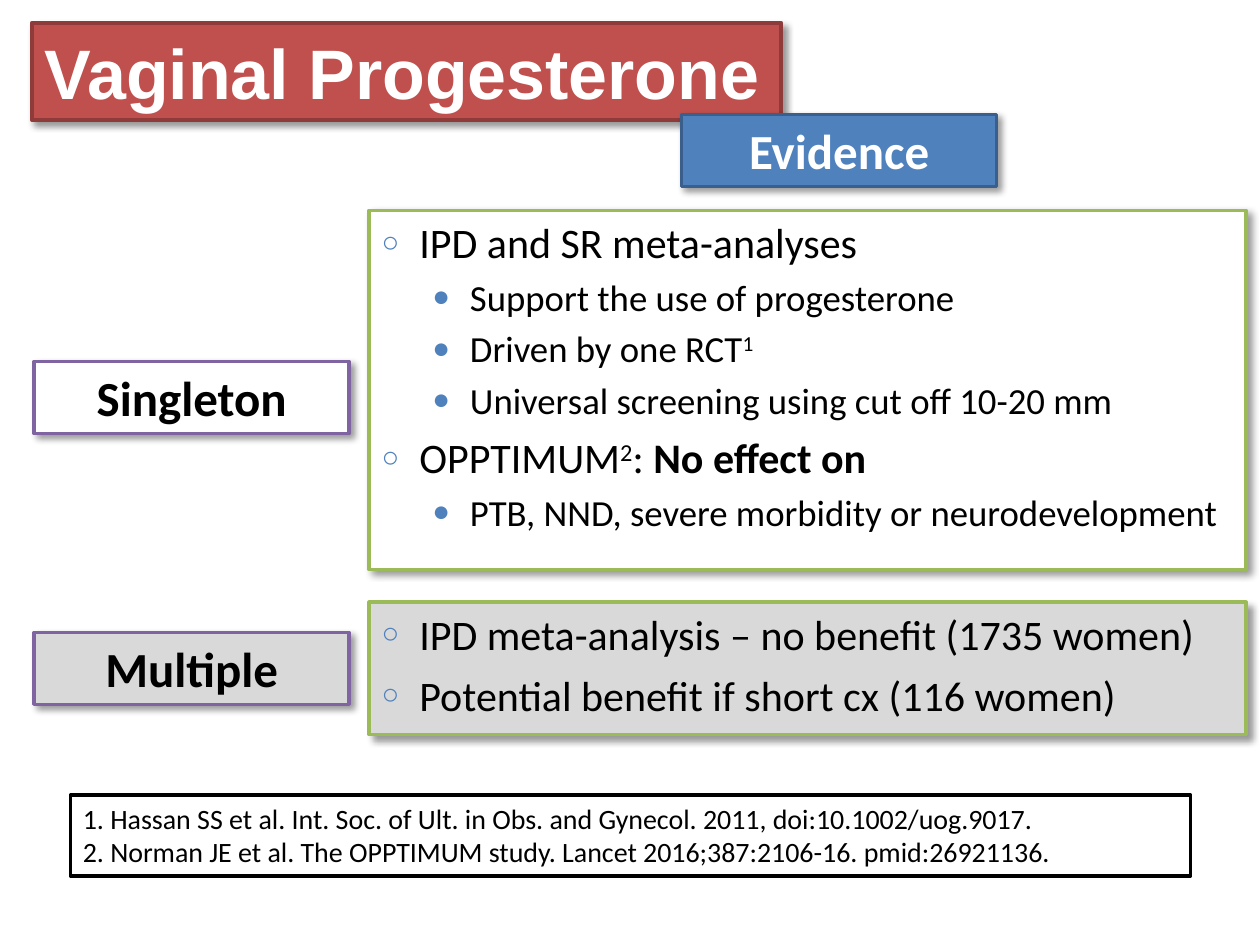
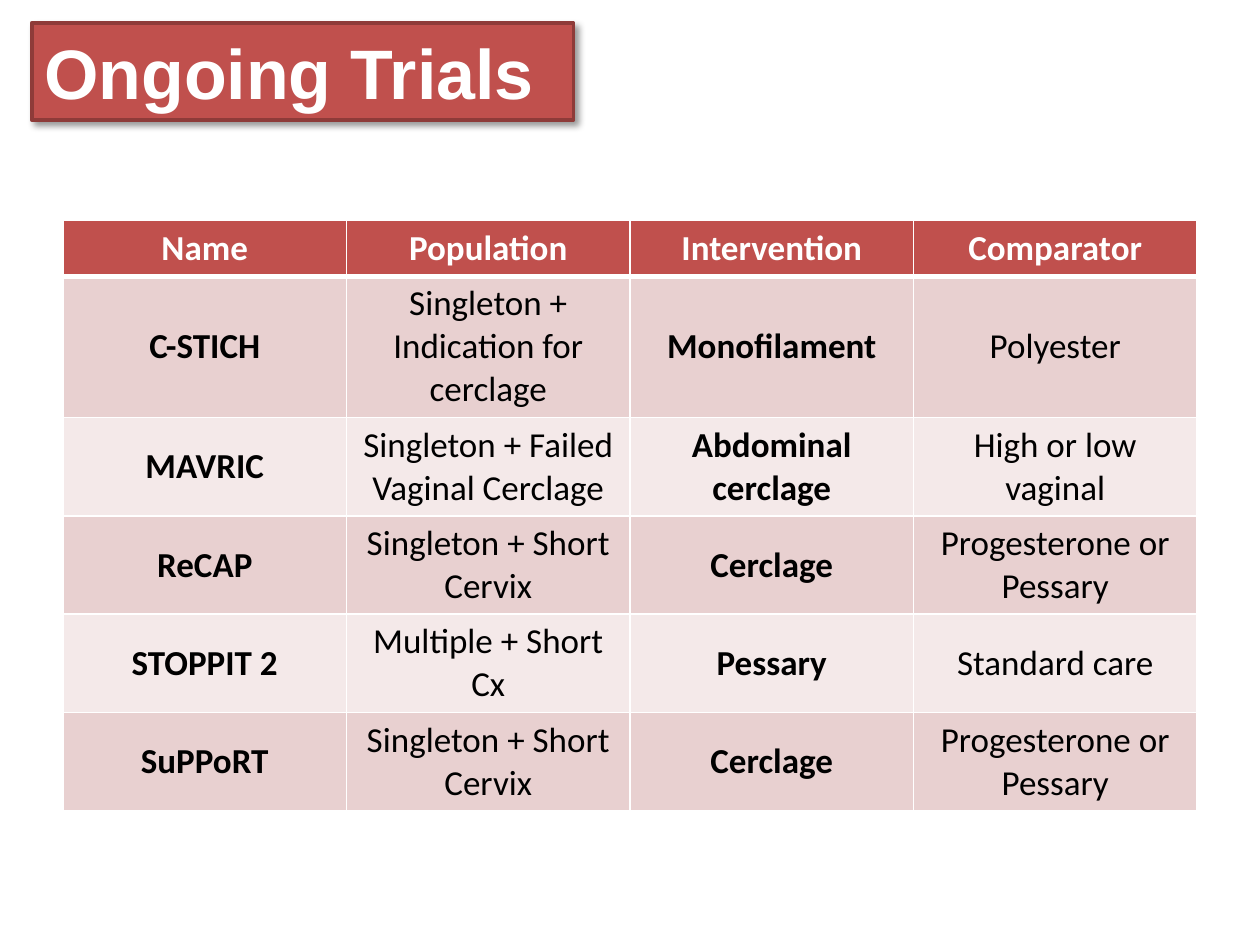
from lxml.etree import SubElement
from pptx import Presentation
from pptx.dml.color import RGBColor
from pptx.enum.shapes import MSO_SHAPE
from pptx.enum.text import MSO_ANCHOR, MSO_AUTO_SIZE, PP_ALIGN
from pptx.oxml.ns import qn
from pptx.util import Cm, Pt

COLOURS = {
    "white": "FFFFFF", "black": "000000", "grey": "D9D9D9",
    "red": "C0504D", "dark_red": "8E3B39", "blue": "4F81BD",
    "dark_blue": "3A5F8C", "green": "9BBB59", "purple": "8064A2",
    "dark_row": "E8D0D0", "light_row": "F4E9E9",
}
BULLETS = [
    {"sign": "○", "percent": 70, "margin": 0.76, "size": 24, "before": 6},
    {"sign": "●", "percent": 80, "margin": 1.78, "size": 21, "before": 4.2},
]
HANGING = 0.76
LABEL_SIZE = (6.35, 1.45)
BODY_LEFT, BODY_WIDTH = 7.44, 17.68

SINGLETON_POINTS = [
    (0, ["IPD and SR meta-analyses"]),
    (1, ["Support the use of progesterone"]),
    (1, ["Driven by one RCT", ("1", {"raised": True})]),
    (1, ["Universal screening using cut off 10-20 mm"]),
    (0, ["OPPTIMUM", ("2", {"raised": True}), ": ", ("No effect on", {"bold": True})]),
    (1, ["PTB, NND, severe morbidity or neurodevelopment"]),
]
MULTIPLE_POINTS = [
    (0, ["IPD meta-analysis – no benefit (1735 women)"]),
    (0, ["Potential benefit if short cx (116 women)"]),
]
REFERENCES = [
    "1. Hassan SS et al. Int. Soc. of Ult. in Obs. and Gynecol. 2011, doi:10.1002/uog.9017.",
    "2. Norman JE et al. The OPPTIMUM study. Lancet 2016;387:2106-16. pmid:26921136.",
]
TRIALS = [
    ["Name", "Population", "Intervention", "Comparator"],
    ["C-STICH", "Singleton + Indication for cerclage", "Monofilament", "Polyester"],
    ["MAVRIC", "Singleton + Failed Vaginal Cerclage", "Abdominal cerclage", "High or low vaginal"],
    ["ReCAP", "Singleton + Short Cervix", "Cerclage", "Progesterone or Pessary"],
    ["STOPPIT 2", "Multiple + Short Cx", "Pessary", "Standard care"],
    ["SuPPoRT", "Singleton + Short Cervix", "Cerclage", "Progesterone or Pessary"],
]
ROW_HEIGHTS = [1.08, 2.8] + [1.95] * 4


def colour(name):
    return RGBColor.from_string(COLOURS[name])


def add_text(paragraph, text, size=24, font="Calibri", ink="black", bold=False,
             raised=False, align=None):
    if align is not None:
        paragraph.alignment = align
    span = paragraph.add_run()
    span.text = text
    span.font.size = Pt(size)
    span.font.name = font
    span.font.bold = bold
    span.font.color.rgb = colour(ink)
    if raised:
        span._r.get_or_add_rPr().set("baseline", "30000")


def next_paragraph(frame, index):
    return frame.add_paragraph() if index else frame.paragraphs[0]


def add_shadow(box):
    effects = SubElement(box._element.spPr, qn("a:effectLst"))
    shadow = SubElement(effects, qn("a:outerShdw"), blurRad=str(Pt(4)), dist=str(Pt(3)),
                        dir="2700000", algn="tl", rotWithShape="0")
    tint = SubElement(shadow, qn("a:srgbClr"), val=COLOURS["black"])
    SubElement(tint, qn("a:alpha"), val="40000")


def style_box(box, fill, line, shadow=True):
    box.fill.solid()
    box.fill.fore_color.rgb = colour(fill)
    box.line.color.rgb = colour(line)
    box.line.width = Pt(2)
    if shadow:
        add_shadow(box)
    frame = box.text_frame
    frame.word_wrap = True
    frame.auto_size = MSO_AUTO_SIZE.NONE
    frame.vertical_anchor = MSO_ANCHOR.TOP


def place(box, left, top, width, height):
    box.left, box.top, box.width, box.height = map(Cm, (left, top, width, height))


def set_title(page, text, width):
    title = page.shapes.title
    place(title, 0.64, 0.46, width, 1.96)
    style_box(title, "red", "dark_red")
    add_text(title.text_frame.paragraphs[0], text, size=40, font="Arial", ink="white",
             bold=True, align=PP_ALIGN.LEFT)


def add_box(page, left, top, width, height, fill, line, shadow=True):
    box = page.shapes.add_shape(MSO_SHAPE.RECTANGLE, *map(Cm, (left, top, width, height)))
    if not shadow:
        box.shadow.inherit = False
    style_box(box, fill, line, shadow)
    return box.text_frame


def add_label(page, text, left, top, fill, line, ink="black"):
    frame = add_box(page, left, top, *LABEL_SIZE, fill, line)
    add_text(frame.paragraphs[0], text, size=28, ink=ink, bold=True, align=PP_ALIGN.CENTER)


def set_bullet(paragraph, level):
    bullet = BULLETS[level]
    paragraph.level = level
    properties = paragraph._p.get_or_add_pPr()
    properties.set("marL", str(Cm(bullet["margin"])))
    properties.set("indent", str(-Cm(HANGING)))
    tint = SubElement(properties, qn("a:buClr"))
    SubElement(tint, qn("a:srgbClr"), val=COLOURS["blue"])
    SubElement(properties, qn("a:buSzPct"), val=str(bullet["percent"] * 1000))
    SubElement(properties, qn("a:buChar"), char=bullet["sign"])


def fill_body(body, points, top, height, fill):
    place(body, BODY_LEFT, top, BODY_WIDTH, height)
    style_box(body, fill, "green")
    for index, (level, pieces) in enumerate(points):
        paragraph = next_paragraph(body.text_frame, index)
        set_bullet(paragraph, level)
        paragraph.space_before = Pt(BULLETS[level]["before"] if index else 0)
        for piece in pieces:
            text, look = (piece, {}) if isinstance(piece, str) else piece
            add_text(paragraph, text, size=BULLETS[level]["size"], **look)


def add_references(page):
    frame = add_box(page, 1.42, 16.03, 22.58, 1.63, "white", "black", shadow=False)
    for index, reference in enumerate(REFERENCES):
        add_text(next_paragraph(frame, index), reference, size=16, align=PP_ALIGN.LEFT)


def set_borders(cell, row):
    properties = cell._tc.get_or_add_tcPr()
    widths = {"L": 1, "R": 1, "T": 3 if row == 1 else 1, "B": 1 if row else 3}
    for side, width in widths.items():
        border = SubElement(properties, qn(f"a:ln{side}"), w=str(Pt(width)))
        paint = SubElement(border, qn("a:solidFill"))
        SubElement(paint, qn("a:srgbClr"), val=COLOURS["white"])


def row_fill(row):
    if row == 0:
        return "red"
    return "dark_row" if row % 2 else "light_row"


def add_trials_table(page):
    frame = page.shapes.add_table(len(TRIALS), len(TRIALS[0]), Cm(1.27), Cm(4.45),
                                  Cm(22.86), Cm(sum(ROW_HEIGHTS)))
    table = frame.table
    for row, texts in enumerate(TRIALS):
        table.rows[row].height = Cm(ROW_HEIGHTS[row])
        for column, text in enumerate(texts):
            cell = table.cell(row, column)
            set_borders(cell, row)
            cell.fill.solid()
            cell.fill.fore_color.rgb = colour(row_fill(row))
            cell.vertical_anchor = MSO_ANCHOR.MIDDLE
            add_text(cell.text_frame.paragraphs[0], text, size=20,
                     ink="black" if row else "white",
                     bold=row == 0 or column in (0, 2), align=PP_ALIGN.CENTER)


def build_evidence(deck):
    page = deck.slides.add_slide(deck.slide_layouts.get_by_name("Two Content"))
    set_title(page, "Vaginal Progesterone", 15.11)
    fill_body(page.placeholders[1], SINGLETON_POINTS, 4.24, 7.24, "white")
    fill_body(page.placeholders[2], MULTIPLE_POINTS, 12.14, 2.67, "grey")
    add_label(page, "Singleton", 0.69, 7.29, "white", "purple")
    add_label(page, "Multiple", 0.69, 12.75, "grey", "purple")
    add_label(page, "Evidence", 13.74, 2.31, "blue", "dark_blue", ink="white")
    add_references(page)


def build_trials(deck):
    page = deck.slides.add_slide(deck.slide_layouts.get_by_name("Title Only"))
    set_title(page, "Ongoing Trials", 10.92)
    add_trials_table(page)


def main():
    deck = Presentation()
    deck.slide_width, deck.slide_height = Cm(25.4), Cm(19.05)
    build_evidence(deck)
    build_trials(deck)
    deck.save("out.pptx")


if __name__ == "__main__":
    main()
